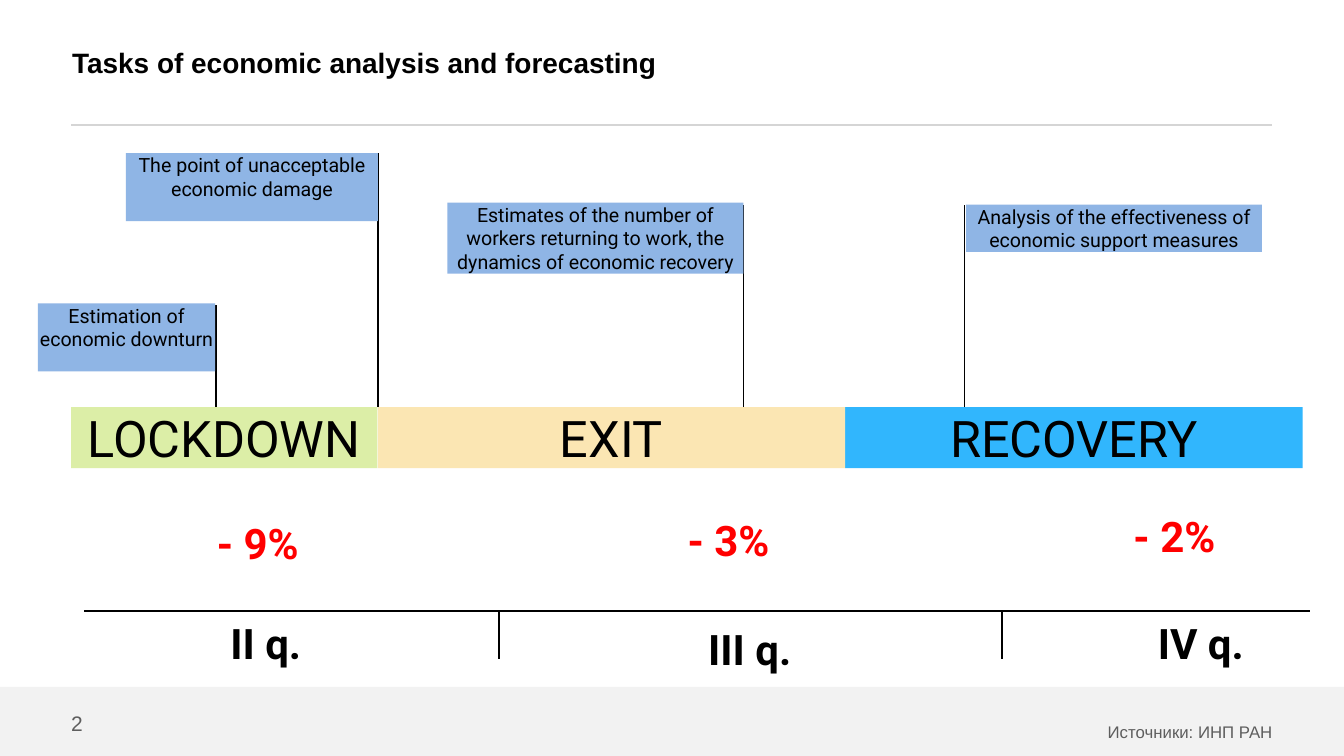
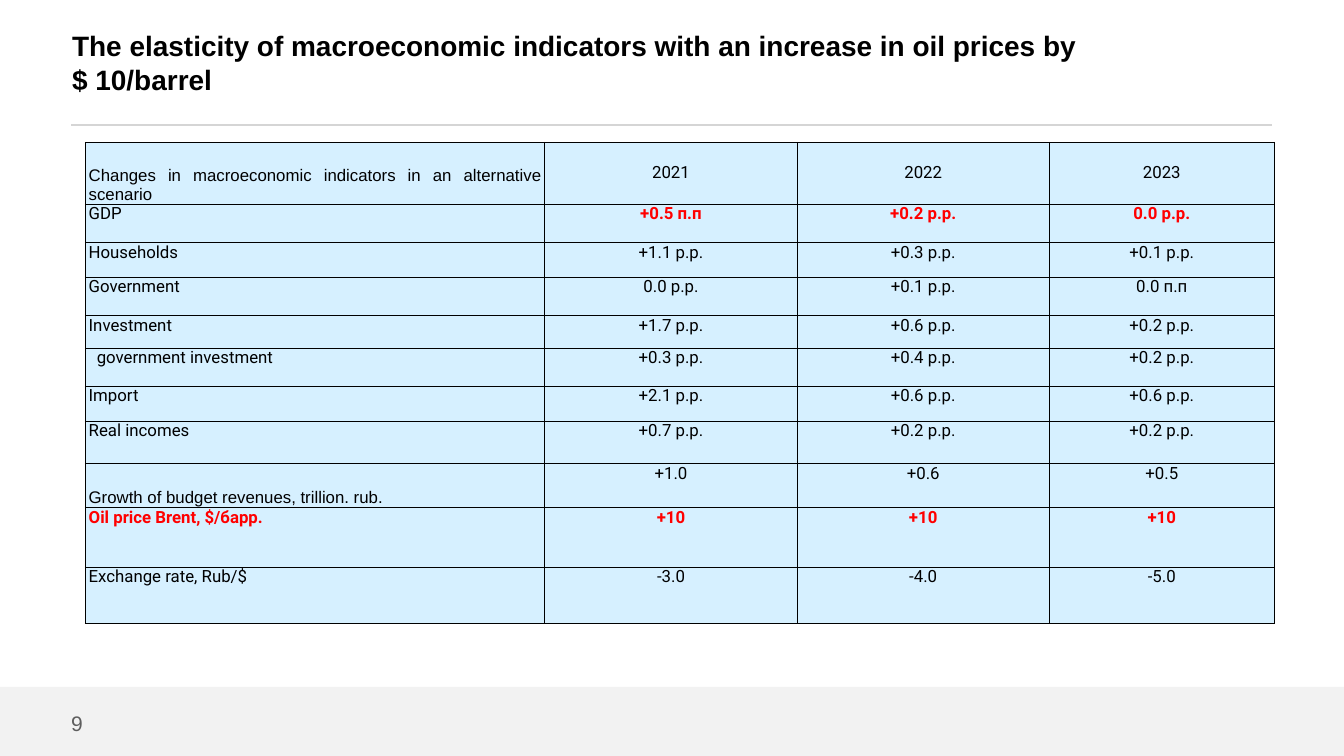
import pptx
import pptx.dml.color
import pptx.enum.shapes
import pptx.enum.text
import pptx.oxml
import pptx.oxml.ns
import pptx.util

PX = 9144  # one px is a hundredth of an inch
SLIDE_WIDTH, SLIDE_HEIGHT = 2667, 1500
BLACK, RED, GREY = "000000", "FF0000", "5E5E5E"
RULE, BAND, LABEL, CELL = "D5D5D5", "F2F2F2", "8FB5E5", "D6F0FF"
SANS, ROBOTO = "Arial", "Roboto"
ALIGN = pptx.enum.text.PP_ALIGN
ANCHOR = pptx.enum.text.MSO_ANCHOR


def px(length):
    return pptx.util.Emu(length * PX)


def color(value):
    return pptx.dml.color.RGBColor.from_string(value)


class Slides:
    """Holds the shared style and the current slide."""

    def __init__(self):
        self.deck = pptx.Presentation()
        self.deck.slide_width = px(SLIDE_WIDTH)
        self.deck.slide_height = px(SLIDE_HEIGHT)
        self.page = None

    def new_page(self, title, number, source=None):
        self.page = self.deck.slides.add_slide(self.deck.slide_layouts[6])
        self.line(141, 248, 2525, 248, RULE, 1.5)
        self.rect(0, 1363, SLIDE_WIDTH, 137, BAND)
        if source:
            self.text(429, 1411, 2096, 53, source, 24, GREY, align=ALIGN.RIGHT,
                      anchor=ANCHOR.TOP, spacing=1.5)
        self.text(141, 1410, 51, 50, number, 30, GREY)
        self.text(143, 0, 2014, 248, title, 40, bold=True)

    def style(self, frame, text, size, ink=BLACK, font=SANS, bold=False,
              align=ALIGN.LEFT, spacing=None):
        frame.text = text
        para = frame.paragraphs[0]
        para.alignment = align
        if spacing:
            para.line_spacing = spacing
        for span in para.runs:
            span.font.size = pptx.util.Pt(size)
            span.font.name = font
            span.font.bold = bold
            span.font.color.rgb = color(ink)

    def fill_frame(self, box, text, size, ink=BLACK, anchor=ANCHOR.MIDDLE,
                   inset=0, wrap=True, **look):
        frame = box.text_frame
        frame.word_wrap = wrap
        frame.vertical_anchor = anchor
        frame.margin_left = frame.margin_right = px(inset)
        frame.margin_top = frame.margin_bottom = px(inset)
        self.style(frame, text, size, ink, **look)

    def text(self, left, top, width, height, text, size, ink=BLACK, **look):
        box = self.page.shapes.add_textbox(px(left), px(top), px(width), px(height))
        self.fill_frame(box, text, size, ink, **look)

    def rect(self, left, top, width, height, fill, text=None, size=0, **look):
        box = self.page.shapes.add_shape(
            pptx.enum.shapes.MSO_SHAPE.RECTANGLE,
            px(left), px(top), px(width), px(height))
        box.shadow.inherit = False
        box.fill.solid()
        box.fill.fore_color.rgb = color(fill)
        box.line.fill.background()
        if text:
            self.fill_frame(box, text, size, font=ROBOTO, align=ALIGN.CENTER, **look)

    def line(self, x1, y1, x2, y2, ink=BLACK, weight=2):
        rule = self.page.shapes.add_connector(
            pptx.enum.shapes.MSO_CONNECTOR.STRAIGHT, px(x1), px(y1), px(x2), px(y2))
        rule.line.color.rgb = color(ink)
        rule.line.width = pptx.util.Pt(weight)
        properties = rule._element.spPr
        properties.append(properties.makeelement(pptx.oxml.ns.qn("a:effectLst"), {}))

    def figure(self, left, top, width, text, ink):
        self.text(left, top, width, 123, text, 60, ink, font=ROBOTO, bold=True,
                  align=ALIGN.CENTER, inset=11, wrap=False)

    def borders(self, cell):
        properties = cell._tc.get_or_add_tcPr()
        for index, side in enumerate(("lnL", "lnR", "lnT", "lnB")):
            properties.insert(index, pptx.oxml.parse_xml(
                f'<a:{side} {pptx.oxml.ns.nsdecls("a")} w="12700"><a:solidFill>'
                f'<a:srgbClr val="{BLACK}"/></a:solidFill></a:{side}>'))

    def cell(self, cell, text, anchor=ANCHOR.TOP, indent=0, **look):
        cell.fill.solid()
        cell.fill.fore_color.rgb = color(CELL)
        cell.margin_left, cell.margin_right = px(7 + indent), px(7)
        cell.margin_top = cell.margin_bottom = 0
        cell.vertical_anchor = anchor
        self.style(cell.text_frame, text, 24, **look)
        self.borders(cell)

    def table(self, left, top, widths, heights):
        table = self.page.shapes.add_table(
            len(heights), len(widths), px(left), px(top),
            px(sum(widths)), px(sum(heights))).table
        table.first_row = table.horz_banding = False
        for column, width in zip(table.columns, widths):
            column.width = px(width)
        for row, height in zip(table.rows, heights):
            row.height = px(height)
        return table


def timeline_page(slides):
    slides.new_page("Tasks of economic analysis and forecasting", "2",
                    "Источники: ИНП РАН")

    # Phases
    phase_top = 808
    for left, width, fill, name in (
            (141, 608, "DCEEA7", "LOCKDOWN"),
            (1677, 908, "31B6FD", "RECOVERY"),
            (750, 927, "FBE6B3", "EXIT")):
        slides.rect(left, phase_top, width, 121, fill, name, 72)

    # Quarter axis
    axis_top = 1212
    slides.line(167, axis_top, 2600, axis_top)
    for x in (990, 1988):
        slides.line(x, axis_top, x, axis_top + 96)
    for left, top, width, quarter in (
            (444, 1213, 167, "II q."),
            (1393, 1225, 190, "III q."),
            (2283, 1213, 200, "IV q.")):
        slides.figure(left, top, width, quarter, BLACK)
    for left, top, change in ((414, 1016, "- 9%"), (1348, 1009, "- 3%"),
                              (2233, 1001, "- 2%")):
        slides.figure(left, top, 195, change, RED)

    # Tasks, each hanging on a pole over its phase
    for pole, pole_top, left, top, width, height, task in (
            (750, 304, 250, 304, 500, 135,
             "The point of unacceptable economic damage"),
            (429, 605, 75, 602, 352, 135,
             "Estimation of economic downturn"),
            (1475, 406, 888, 402, 587, 141,
             "Estimates of the number of workers returning to work, "
             "the dynamics of economic recovery"),
            (1914, 406, 1917, 406, 587, 94,
             "Analysis of the effectiveness of economic support measures")):
        slides.line(pole, phase_top, pole, pole_top)
        slides.rect(left, top, width, height, LABEL, task, 28, anchor=ANCHOR.TOP)


def elasticity_page(slides):
    slides.new_page("The elasticity of macroeconomic indicators with an increase "
                    "in oil prices by $ 10/barrel", "9")
    header = "Changes in macroeconomic indicators in an alternative scenario"
    revenues = "Growth of budget revenues, trillion. rub."
    oil = "Oil price Brent, $/барр."
    state = "government investment"
    rows = (
        (123, header, "2021", "2022", "2023"),
        (76, "GDP", "+0.5 п.п", "+0.2 p.p.", "0.0 p.p."),
        (69, "Households", "+1.1 p.p.", "+0.3 p.p.", "+0.1 p.p."),
        (76, "Government", "0.0 p.p.", "+0.1 p.p.", "0.0 п.п"),
        (65, "Investment", "+1.7 p.p.", "+0.6 p.p.", "+0.2 p.p."),
        (75, state, "+0.3 p.p.", "+0.4 p.p.", "+0.2 p.p."),
        (69, "Import", "+2.1 p.p.", "+0.6 p.p.", "+0.6 p.p."),
        (85, "Real incomes", "+0.7 p.p.", "+0.2 p.p.", "+0.2 p.p."),
        (87, revenues, "+1.0", "+0.6", "+0.5"),
        (118, oil, "+10", "+10", "+10"),
        (112, "Exchange rate, Rub/$", "-3.0", "-4.0", "-5.0"),
    )
    table = slides.table(169, 282, (912, 501, 500, 447), [row[0] for row in rows])
    for row, (_, name, *values) in enumerate(rows):
        # Indicator names
        low, red = name in (header, revenues), name == oil
        slides.cell(table.cell(row, 0), name, ANCHOR.BOTTOM if low else ANCHOR.TOP,
                    indent=16 if name == state else 0,
                    font=SANS if low else ROBOTO, ink=RED if red else BLACK,
                    bold=red, align=ALIGN.JUSTIFY)
        # Years and values
        red = name in ("GDP", oil)
        for column, value in enumerate(values, 1):
            slides.cell(table.cell(row, column), value,
                        ANCHOR.MIDDLE if name == header else ANCHOR.TOP,
                        font=ROBOTO, ink=RED if red else BLACK, bold=red,
                        align=ALIGN.CENTER)


def main():
    slides = Slides()
    timeline_page(slides)
    elasticity_page(slides)
    slides.deck.save("out.pptx")


if __name__ == "__main__":
    main()
